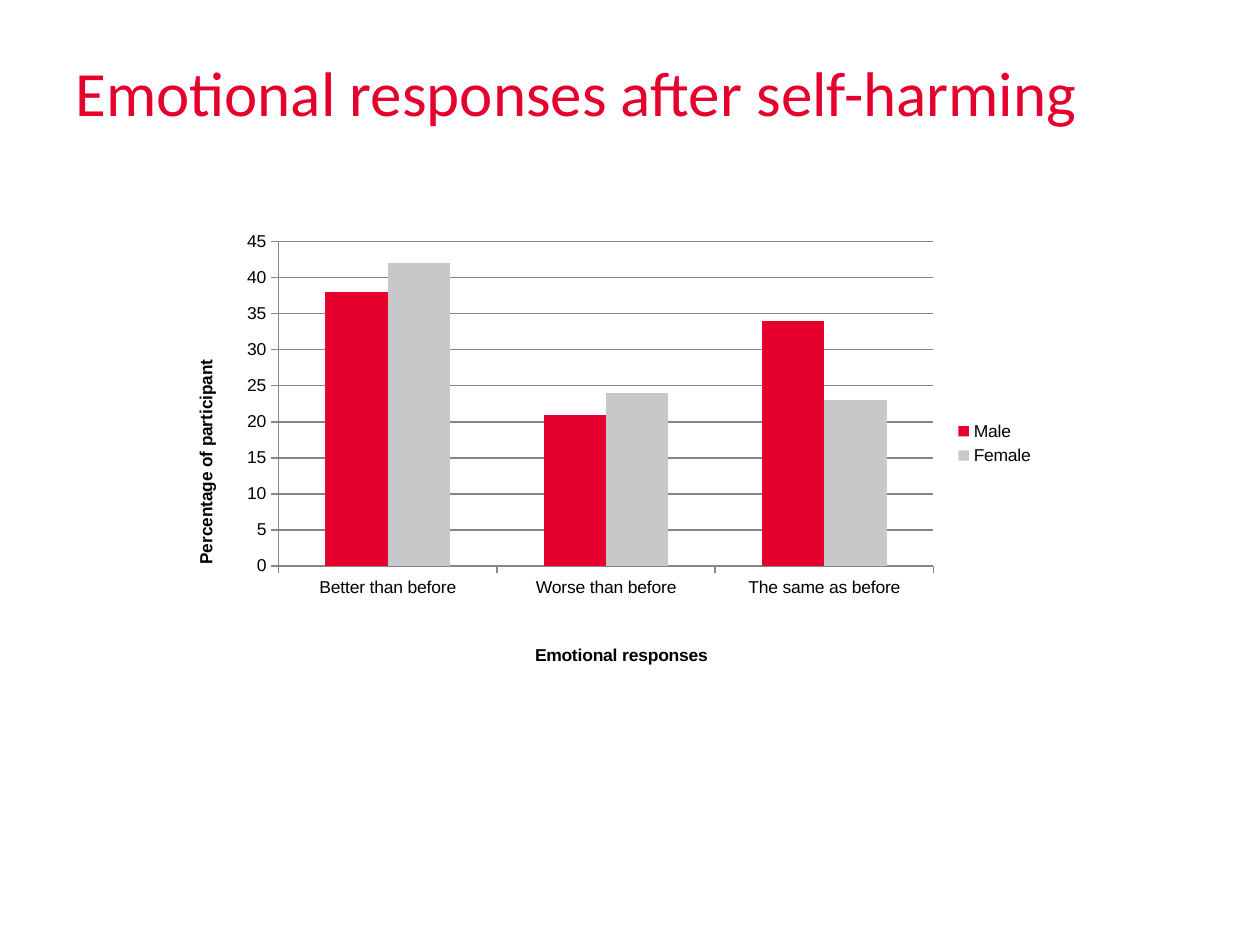
from dataclasses import dataclass

import pptx
import pptx.chart.data
import pptx.dml.color
import pptx.enum.chart
import pptx.enum.text
import pptx.oxml
import pptx.oxml.ns
import pptx.util
from pptx.util import Inches

RED = pptx.dml.color.RGBColor(0xE5, 0x00, 0x2D)
SILVER = pptx.dml.color.RGBColor(0xC7, 0xC8, 0xCA)
GREY = pptx.dml.color.RGBColor(0x86, 0x86, 0x86)
BLACK = pptx.dml.color.RGBColor(0, 0, 0)


@dataclass
class Group:
    name: str
    vals: tuple
    color: pptx.dml.color.RGBColor


@dataclass
class Place:
    """Manual position of a chart element, as fractions of the chart."""
    tag: str
    index: int
    spots: dict


MOODS = ("Better than before", "Worse than before", "The same as before")
GROUPS = (
    Group("Male", (38, 21, 34), RED),
    Group("Female", (42, 24, 23), SILVER),
)
PLACES = (
    Place("c:plotArea", 0, {"x": 0.12, "y": 0.04, "w": 0.75, "h": 0.74}),
    Place("c:catAx/c:title", 1, {"x": 0.41, "y": 0.95}),
    Place("c:valAx/c:title", 1, {"x": 0.02, "y": 0.31}),
)


def write(frame, text: str, *, size: float, font: str, color, bold=False) -> None:
    run = frame.paragraphs[0].add_run()
    run.text = text
    run.font.size = pptx.util.Pt(size)
    run.font.name = font
    run.font.bold = bold
    run.font.color.rgb = color


def style_axis(axis, title: str) -> None:
    write(axis.axis_title.text_frame, title, size=10, font="Arial", color=BLACK, bold=True)
    axis.major_tick_mark = pptx.enum.chart.XL_TICK_MARK.OUTSIDE
    axis.minor_tick_mark = pptx.enum.chart.XL_TICK_MARK.NONE
    axis.format.line.color.rgb = GREY


def set_place(root, place: Place) -> None:
    node = root.xpath(f".//{place.tag}")[0]
    for old in node.xpath("./c:layout"):
        node.remove(old)
    inner = '<c:layoutTarget val="inner"/>' if "w" in place.spots else ""
    modes = "".join(f'<c:{key}Mode val="edge"/>' for key in "xy")
    spots = "".join(f'<c:{key} val="{val}"/>' for key, val in place.spots.items())
    node.insert(place.index, pptx.oxml.parse_xml(
        f'<c:layout {pptx.oxml.ns.nsdecls("c")}><c:manualLayout>'
        f"{inner}{modes}{spots}</c:manualLayout></c:layout>"))


def add_title(slide) -> None:
    box = slide.shapes.add_textbox(Inches(0.5), Inches(0.3), Inches(9), Inches(0.85))
    frame = box.text_frame
    frame.word_wrap = True
    frame.vertical_anchor = pptx.enum.text.MSO_ANCHOR.MIDDLE
    write(frame, "Emotional responses after self-harming", size=36, font="Calibri", color=RED)


def add_bars(slide) -> None:
    data = pptx.chart.data.CategoryChartData(number_format="0")
    data.categories = MOODS
    for group in GROUPS:
        data.add_series(group.name, group.vals)
    chart = slide.shapes.add_chart(
        pptx.enum.chart.XL_CHART_TYPE.COLUMN_CLUSTERED,
        Inches(1.38), Inches(1.78), Inches(6.93), Inches(3.54), data).chart
    chart.has_title = False
    chart.font.size = pptx.util.Pt(10)
    chart.font.name = "Arial"
    chart.font.color.rgb = BLACK

    # Columns
    plot = chart.plots[0]
    plot.gap_width = 150
    plot.overlap = 0
    plot.vary_by_categories = False
    for series, group in zip(plot.series, GROUPS):
        series.format.fill.solid()
        series.format.fill.fore_color.rgb = group.color

    # Axes
    style_axis(chart.category_axis, "Emotional responses")
    axis = chart.value_axis
    style_axis(axis, "Percentage of participant")
    axis.minimum_scale, axis.maximum_scale, axis.major_unit = 0, 45, 5
    axis.tick_labels.number_format = "0"
    axis.tick_labels.number_format_is_linked = False
    axis.has_major_gridlines = True
    axis.major_gridlines.format.line.color.rgb = GREY

    # Legend
    chart.has_legend = True
    chart.legend.position = pptx.enum.chart.XL_LEGEND_POSITION.RIGHT
    chart.legend.include_in_layout = False

    # Positions inside the chart
    root = chart._chartSpace
    for body in root.xpath(".//c:valAx/c:title//a:bodyPr"):
        body.set("rot", "-5400000")
        body.set("vert", "horz")
    for place in PLACES:
        set_place(root, place)


def main() -> None:
    deck = pptx.Presentation()
    deck.slide_width, deck.slide_height = Inches(10), Inches(7.5)
    slide = deck.slides.add_slide(deck.slide_layouts[6])
    add_title(slide)
    add_bars(slide)
    deck.save("out.pptx")


if __name__ == "__main__":
    main()
